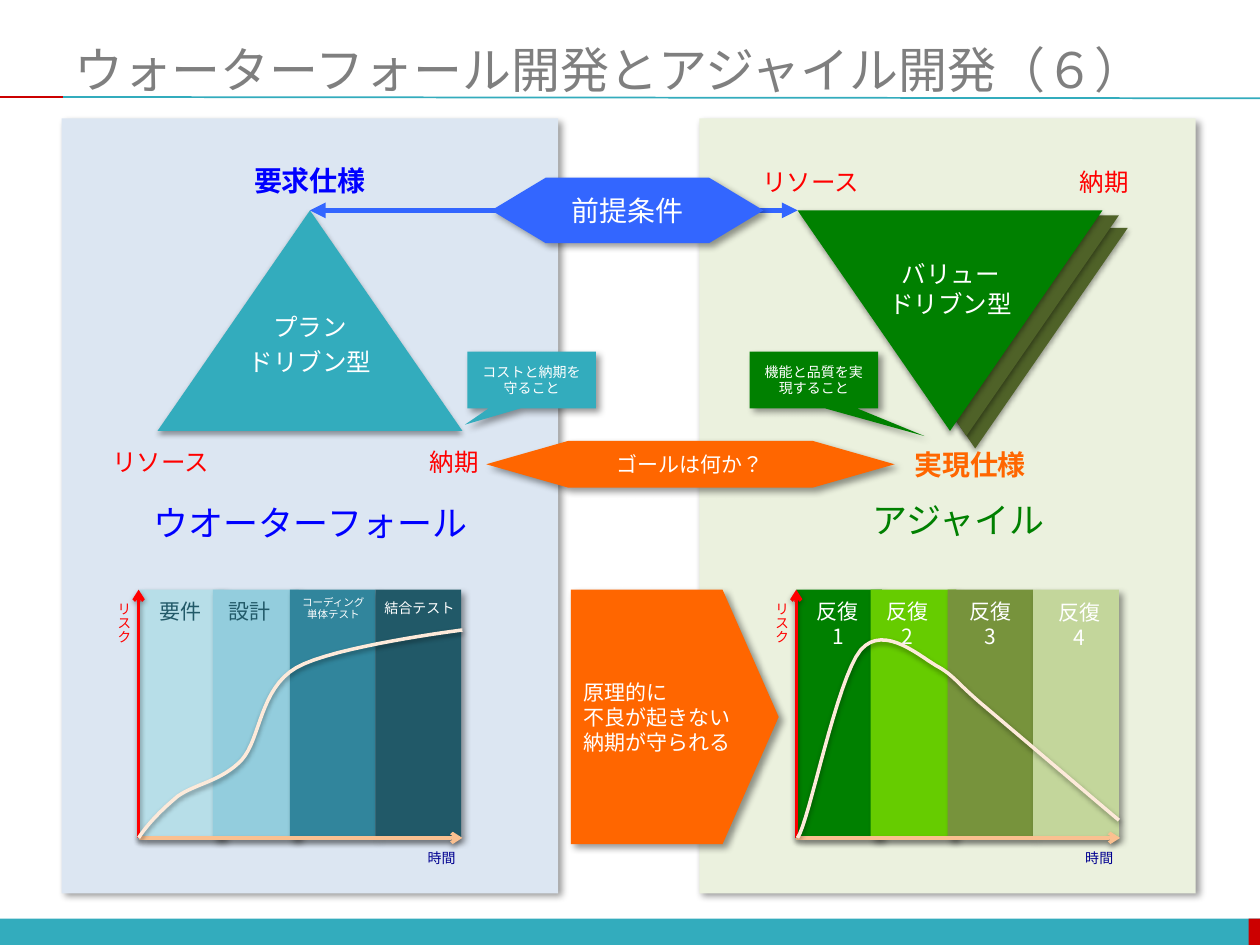
from lxml.etree import SubElement
from pptx import Presentation
from pptx.dml.color import RGBColor
from pptx.enum.lang import MSO_LANGUAGE_ID
from pptx.enum.shapes import MSO_CONNECTOR, MSO_SHAPE
from pptx.enum.text import MSO_ANCHOR, MSO_AUTO_SIZE, PP_ALIGN
from pptx.oxml.ns import qn
from pptx.util import Inches, Pt

THEME = {
    "font": "Noto Sans CJK JP",
    "white": "FFFFFF", "grey": "7F7F7F", "teal": "33ACBD", "crimson": "CC0000",
    "red": "FF0000", "blue": "0000FF", "sky": "3366FF", "navy": "000090",
    "green": "008000", "lime": "66CC00", "orange": "FF6600",
    "olive": "4F6228", "moss": "77933C", "pale_green": "C3D69B",
    "panel_blue": "DCE6F2", "panel_green": "EBF1DE",
    "aqua1": "B7DEE8", "aqua2": "93CDDD", "aqua3": "31859C", "aqua4": "215968",
    "time_axis": "FAC090", "curve": "FDEADA",
    "title": 28, "name": 20, "key": 16, "body": 14, "note": 12, "small": 8, "tiny": 6,
}
# Shadows: opacity %, blur pt, distance pt, direction in degrees
DEEP = (40, 4, 3, 45)
SOFT = (38, 3.1, 1.6, 90)

# ---- Content ----
TITLE = "ウォーターフォール開発とアジャイル開発（６）"
PANELS = [(0.49, "panel_blue"), (5.55, "panel_green")]
# Stacked inverted triangles, back to front: left, top, colour
VALUE_TRIANGLES = [(6.53, 1.81, "olive"), (6.46, 1.71, "olive"), (6.33, 1.67, "green")]
PLAN_TEXT = ["プラン", "ドリブン型"]
VALUE_TEXT = ["バリュー", "ドリブン型"]
# Labels: text, left, top, width, height, size, colour, bold
LABELS = [
    ("リソース", 0.78, 3.5, 0.99, 0.34, "body", "red", False),
    ("納期", 3.31, 3.5, 0.59, 0.34, "body", "red", False),
    ("リソース", 5.94, 1.28, 0.99, 0.34, "body", "red", False),
    ("納期", 8.47, 1.28, 0.59, 0.34, "body", "red", False),
    ("要求仕様", 1.91, 1.25, 1.1, 0.37, "key", "blue", True),
    ("実現仕様", 7.15, 3.5, 1.1, 0.37, "key", "orange", True),
    ("ウオーターフォール", 1.1, 3.93, 2.73, 0.44, "name", "blue", False),
    ("アジャイル", 6.81, 3.91, 1.6, 0.44, "name", "green", False),
]
# Risk charts; stage labels: lines, offset, top, width, size, text colour, bar colour
WATERFALL = {
    "left": 1.1,
    "stages": [
        (["要件"], 0.06, 4.7, 0.54, "note", "aqua4", "aqua1"),
        (["設計"], 0.61, 4.7, 0.54, "note", "aqua4", "aqua2"),
        (["コーディング", "単体テスト"], 1.19, 4.68, 0.71, "tiny", "white", "aqua3"),
        (["結合テスト"], 1.85, 4.71, 0.76, "small", "white", "aqua4"),
    ],
    "wrap": False,
    "start": (1.1, 6.65),
    "curves": [
        ((1.18, 6.53), (1.28, 6.43), (1.41, 6.32)),
        ((1.55, 6.22), (1.76, 6.2), (1.92, 6.03)),
        ((2.07, 5.86), (2.06, 5.47), (2.35, 5.3)),
        ((2.64, 5.13), (3.67, 5), (3.67, 5)),
    ],
}
AGILE = {
    "left": 6.32,
    "stages": [
        (["反復1"], 0.01, 4.7, 0.64, "note", "white", "green"),
        (["反復2"], 0.56, 4.7, 0.64, "note", "white", "lime"),
        (["反復3"], 1.22, 4.7, 0.64, "note", "white", "moss"),
        (["反復4"], 1.93, 4.71, 0.64, "note", "white", "pale_green"),
    ],
    "wrap": True,
    "start": (6.33, 6.65),
    "curves": [
        ((6.42, 6.53), (6.64, 5.39), (6.83, 5.16)),
        ((7.02, 4.94), (7.32, 5.23), (7.46, 5.3)),
        ((7.59, 5.38), (7.59, 5.42), (7.83, 5.62)),
        ((7.83, 5.62), (8.88, 6.51), (8.88, 6.51)),
    ],
}
BAR_OFFSETS = (0, 0.59, 1.2, 1.88)
CHART_TOP, CHART_BASE, CHART_WIDTH = 4.68, 6.65, 2.57
# Callouts: preset, box, adjustments, colour, lines, size, alignment
CALLOUTS = [
    (MSO_SHAPE.FLOWCHART_PREPARATION, (3.9, 1.41, 2.16, 0.52), (), "sky",
     ["前提条件"], "key", PP_ALIGN.CENTER),
    (MSO_SHAPE.PENTAGON, (4.53, 4.68, 1.65, 2.02), (0.27,), "orange",
     ["原理的に", "不良が起きない", "納期が守られる"], "note", PP_ALIGN.LEFT),
    (MSO_SHAPE.RECTANGULAR_CALLOUT, (3.71, 2.79, 1.02, 0.45), (-0.52, 0.79), "teal",
     ["コストと納期を守ること"], "small", PP_ALIGN.CENTER),
    (MSO_SHAPE.RECTANGULAR_CALLOUT, (5.95, 2.79, 1.02, 0.45), (0.86, 0.99), "green",
     ["機能と品質を実現すること"], "small", PP_ALIGN.CENTER),
    (MSO_SHAPE.FLOWCHART_PREPARATION, (3.86, 3.5, 3.24, 0.37), (), "orange",
     ["ゴールは何か？"], "note", PP_ALIGN.CENTER),
]

prs = Presentation()
prs.slide_width, prs.slide_height = Inches(10), Inches(7.5)
slide = prs.slides.add_slide(prs.slide_layouts[6])
shapes = slide.shapes


# ---- Helpers ----
def rgb(name):
    return RGBColor.from_string(THEME[name])


def set_shadow(item, shadow):
    effects = SubElement(item._element.spPr, qn("a:effectLst"))
    if shadow:
        opacity, blur, distance, angle = shadow
        outer = SubElement(effects, qn("a:outerShdw"), blurRad=str(Pt(blur)),
                           dist=str(Pt(distance)), dir=str(angle * 60000), rotWithShape="0")
        black = SubElement(outer, qn("a:srgbClr"), val="000000")
        SubElement(black, qn("a:alpha"), val=str(opacity * 1000))


def write(frame, lines, size, color, align=PP_ALIGN.CENTER, bold=False, gap=0):
    frame.text = "\n".join(lines)
    for index, paragraph in enumerate(frame.paragraphs):
        paragraph.alignment = align
        if gap and index:
            paragraph.space_before = Pt(gap)
        font = paragraph.font
        font.name, font.size, font.bold = THEME["font"], Pt(THEME[size]), bold
        font.language_id = MSO_LANGUAGE_ID.JAPANESE
        font.color.rgb = rgb(color)
        SubElement(font._element, qn("a:ea"), typeface=THEME["font"])


def add_label(box, lines, size, color, wrap=False, **style):
    frame = shapes.add_textbox(*map(Inches, box)).text_frame
    frame.word_wrap = wrap
    frame.auto_size = MSO_AUTO_SIZE.SHAPE_TO_FIT_TEXT
    write(frame, lines, size, color, **style)
    return frame


def add_block(preset, box, color, shadow=None, flip=False):
    block = shapes.add_shape(preset, *map(Inches, box))
    block.fill.solid()
    block.fill.fore_color.rgb = rgb(color)
    block.line.fill.background()
    set_shadow(block, shadow)
    if flip:
        block._element.spPr.xfrm.set("flipV", "1")
    return block


def add_line(start, end, color, width, shadow=None, head=None, tail=None):
    line = shapes.add_connector(MSO_CONNECTOR.STRAIGHT, *map(Inches, start + end))
    line.line.color.rgb = rgb(color)
    line.line.width = Pt(width)
    for tag, kind in (("a:headEnd", head), ("a:tailEnd", tail)):
        if kind:
            SubElement(line.line._get_or_add_ln(), qn(tag), type=kind)
    set_shadow(line, shadow)


def curve_points(start, curves, steps=16):
    for first, second, end in curves:
        for step in range(1, steps + 1):
            t = step / steps
            weights = ((1 - t) ** 3, 3 * t * (1 - t) ** 2, 3 * t * t * (1 - t), t ** 3)
            yield tuple(Inches(sum(w * p[axis] for w, p in zip(weights, (start, first, second, end))))
                        for axis in (0, 1))
        start = end


def add_risk_chart(chart):
    left, stages = chart["left"], chart["stages"]
    for offset, stage in zip(BAR_OFFSETS, stages):
        add_block(MSO_SHAPE.RECTANGLE, (left + offset, CHART_TOP, 0.68, 1.98), stage[-1], DEEP)
    origin = (left, CHART_BASE)
    add_line(origin, (left, CHART_TOP), "red", 2, SOFT, tail="arrow")
    add_line(origin, (left + CHART_WIDTH, CHART_BASE), "time_axis", 2, SOFT, tail="arrow")
    for lines, offset, top, width, size, color, _ in stages:
        frame = add_label((left + offset, top, width, 0.3), lines, size, color, chart["wrap"])
        if chart["wrap"]:
            frame.margin_left = frame.margin_right = Inches(0.12)
    builder = shapes.build_freeform(*map(Inches, chart["start"]))
    builder.add_line_segments(curve_points(chart["start"], chart["curves"]), close=False)
    risk_curve = builder.convert_to_shape()
    risk_curve.fill.background()
    risk_curve.line.color.rgb = rgb("curve")
    risk_curve.line.width = Pt(2)
    set_shadow(risk_curve, SOFT)
    risk = add_label((left - 0.34, CHART_TOP, 0.34, 0.44), ["リスク"], "small", "red")
    risk._txBody.bodyPr.set("vert", "eaVert")
    add_label((left + 2.19, 6.69, 0.43, 0.24), ["時間"], "small", "navy")


# ---- Footer bands, title and its rule ----
add_block(MSO_SHAPE.RECTANGLE, (0, 7.29, 10, 0.21), "teal")
add_block(MSO_SHAPE.RECTANGLE, (9.91, 7.29, 0.09, 0.21), "crimson")
add_line((0.5, 0.77), (10, 0.78), "teal", 1)
add_line((0, 0.77), (0.5, 0.77), "crimson", 1)
title = shapes.add_textbox(*map(Inches, (0.49, 0.35, 9.51, 0.4))).text_frame
title.word_wrap, title.vertical_anchor = True, MSO_ANCHOR.MIDDLE
write(title, [TITLE], "title", "grey", PP_ALIGN.LEFT)

# ---- Panels and triangles ----
for left, color in PANELS:
    add_block(MSO_SHAPE.RECTANGLE, (left, 0.94, 3.94, 6.15), color, DEEP)
plan = add_block(MSO_SHAPE.ISOSCELES_TRIANGLE, (1.25, 1.67, 2.42, 1.75), "teal", SOFT)
plan.text_frame.margin_top, plan.text_frame.margin_bottom = 0, Inches(0.5)
write(plan.text_frame, PLAN_TEXT, "body", "white", gap=3)
for left, top, color in VALUE_TRIANGLES:
    add_block(MSO_SHAPE.ISOSCELES_TRIANGLE, (left, top, 2.42, 1.75), color, SOFT, flip=True)
add_line((2.46, 1.67), (6.33, 1.67), "sky", 3, head="triangle", tail="triangle")
add_label((6.67, 2.01, 1.75, 0.57), VALUE_TEXT, "body", "white", wrap=True)

# ---- Labels, risk charts and callouts ----
for text, left, top, width, height, size, color, bold in LABELS:
    add_label((left, top, width, height), [text], size, color, bold=bold)
for chart in (WATERFALL, AGILE):
    add_risk_chart(chart)
for preset, box, adjustments, color, lines, size, align in CALLOUTS:
    callout = add_block(preset, box, color, DEEP)
    for index, value in enumerate(adjustments):
        callout.adjustments[index] = value
    callout.text_frame.word_wrap = True
    write(callout.text_frame, lines, size, "white", align)

prs.save("out.pptx")
